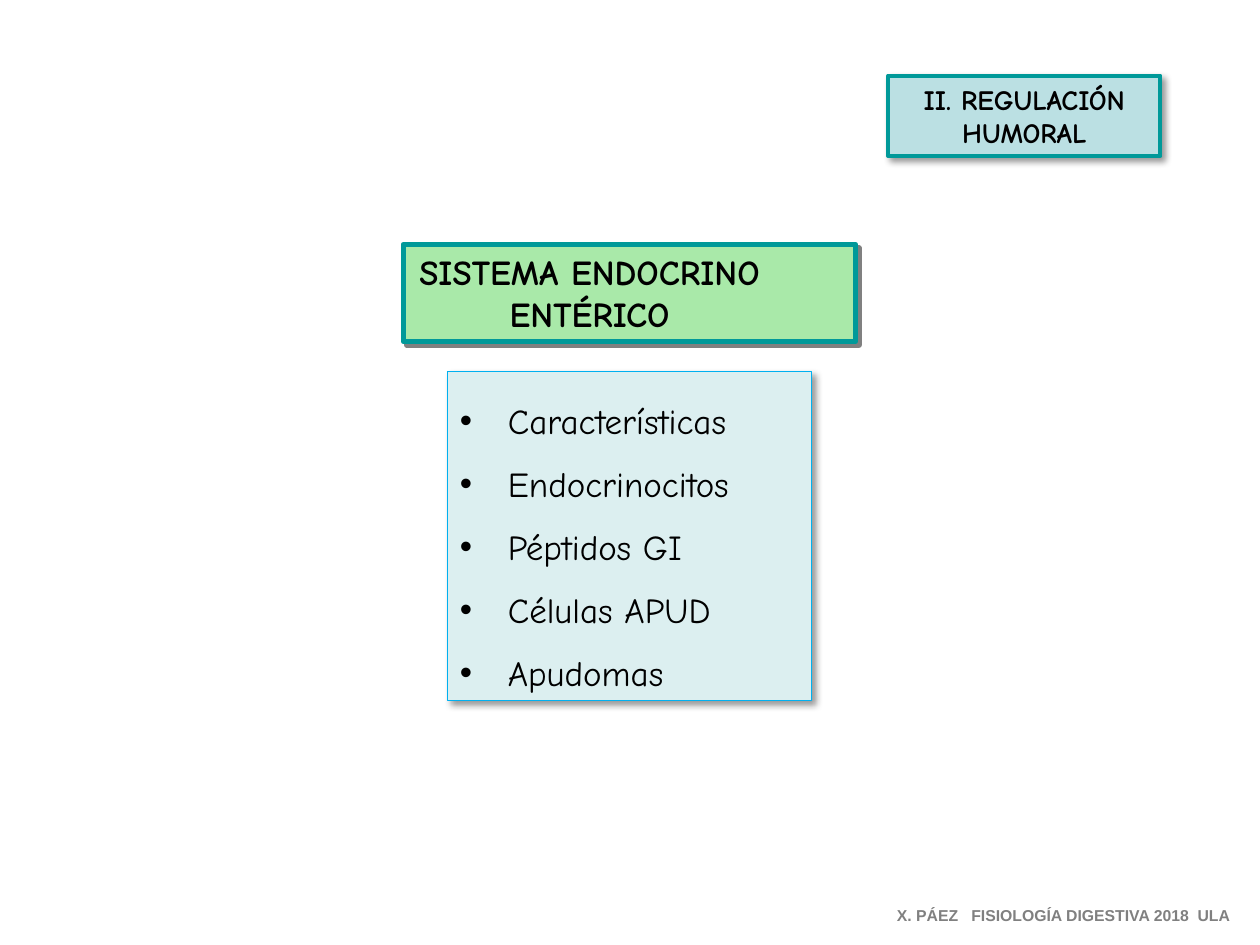
from lxml.etree import SubElement
from pptx import Presentation
from pptx.dml.color import RGBColor
from pptx.enum.shapes import MSO_SHAPE
from pptx.enum.text import MSO_ANCHOR as Anchor, MSO_AUTO_SIZE as AutoSize, PP_ALIGN as Align
from pptx.oxml.ns import qn
from pptx.util import Inches, Pt

BLACK = RGBColor(0x00, 0x00, 0x00)
GRAY = RGBColor(0x80, 0x80, 0x80)
TEAL = RGBColor(0x00, 0x99, 0x99)
SKY = RGBColor(0x00, 0xB0, 0xF0)
GREEN = RGBColor(0xA9, 0xE9, 0xA9)
PALE_BLUE = RGBColor(0xBB, 0xE0, 0xE3)
ICE = RGBColor(0xDC, 0xEF, 0xF0)

TOPICS = ["Características", "Endocrinocitos", "Péptidos GI", "Células APUD", "Apudomas"]


def place(shape, left, top, width, height):
    shape.left, shape.top = Inches(left), Inches(top)
    shape.width, shape.height = Inches(width), Inches(height)


def write(shape, lines, size, font="Comic Neue", color=BLACK, bold=False, align=Align.LEFT,
          anchor=Anchor.MIDDLE, wrap=True, margins=(0.1, 0.05, 0.1, 0.05), gap=0, hang=None):
    """Fill the shape with one paragraph per line; margins are left, top, right, bottom."""
    frame = shape.text_frame
    frame.text = "\n".join(lines)
    frame.auto_size = AutoSize.NONE
    frame.word_wrap = wrap
    frame.vertical_anchor = anchor
    (frame.margin_left, frame.margin_top,
     frame.margin_right, frame.margin_bottom) = map(Inches, margins)
    for paragraph in frame.paragraphs:
        paragraph.alignment = align
        paragraph.space_before = Pt(0)
        paragraph.space_after = Pt(gap)
        if hang is not None:
            properties = paragraph._p.get_or_add_pPr()
            properties.set("marL", str(Inches(hang)))
            properties.set("indent", str(-Inches(hang)))
        letters = paragraph.runs[0].font
        letters.name, letters.size, letters.bold = font, Pt(size), bold
        letters.color.rgb = color


def paint(shape, fill, line, line_width):
    shape.fill.solid()
    shape.fill.fore_color.rgb = fill
    shape.line.color.rgb = line
    shape.line.width = Pt(line_width)


def cast_shadow(shape, color=BLACK, opacity=40, blur=4, distance=3):
    """Give the shape a shadow towards the lower right."""
    shape.shadow.inherit = False
    effects = shape._element.spPr.find(qn("a:effectLst"))
    shadow = SubElement(effects, qn("a:outerShdw"), blurRad=str(Pt(blur)),
                        dist=str(Pt(distance)), dir=str(45 * 60000),
                        algn="tl", rotWithShape="0")
    tint = SubElement(shadow, qn("a:srgbClr"), val=str(color))
    SubElement(tint, qn("a:alpha"), val=str(opacity * 1000))


def add_topics(slide):
    topics = slide.placeholders[1]
    place(topics, 3.55, 2.95, 2.89, 2.61)
    paint(topics, ICE, SKY, 0.75)
    cast_shadow(topics)
    write(topics, TOPICS, 20, anchor=Anchor.TOP, margins=(0.1, 0.22, 0.1, 0), gap=12, hang=0.38)


def add_title(slide):
    title = slide.shapes.title
    place(title, 3.2, 1.94, 3.59, 0.77)
    paint(title, GREEN, TEAL, 3)
    cast_shadow(title, GRAY, opacity=100, blur=0, distance=2.8)
    write(title, ["SISTEMA ENDOCRINO", "ENTÉRICO"], 20, bold=True, align=Align.CENTER,
          margins=(0.05, 0.05, 0.68, 0.05))


def add_section_tag(slide):
    tag = slide.shapes.add_shape(MSO_SHAPE.RECTANGLE, 0, 0, 0, 0)
    place(tag, 7.05, 0.6, 2.16, 0.64)
    paint(tag, PALE_BLUE, TEAL, 2.25)
    cast_shadow(tag)
    write(tag, ["II. REGULACIÓN", "HUMORAL"], 16, bold=True, align=Align.CENTER)


def add_credit(slide):
    credit = slide.shapes.add_textbox(0, 0, 0, 0)
    place(credit, 7.02, 7.14, 2.92, 0.25)
    write(credit, ["X. PÁEZ   FISIOLOGÍA DIGESTIVA 2018  ULA"], 9, font="Arial",
          color=GRAY, bold=True, anchor=Anchor.TOP, wrap=False)


def main():
    deck = Presentation()
    deck.slide_width, deck.slide_height = Inches(10), Inches(7.5)
    slide = deck.slides.add_slide(deck.slide_layouts[1])
    add_topics(slide)
    add_title(slide)
    add_credit(slide)
    add_section_tag(slide)
    deck.save("out.pptx")


if __name__ == "__main__":
    main()
